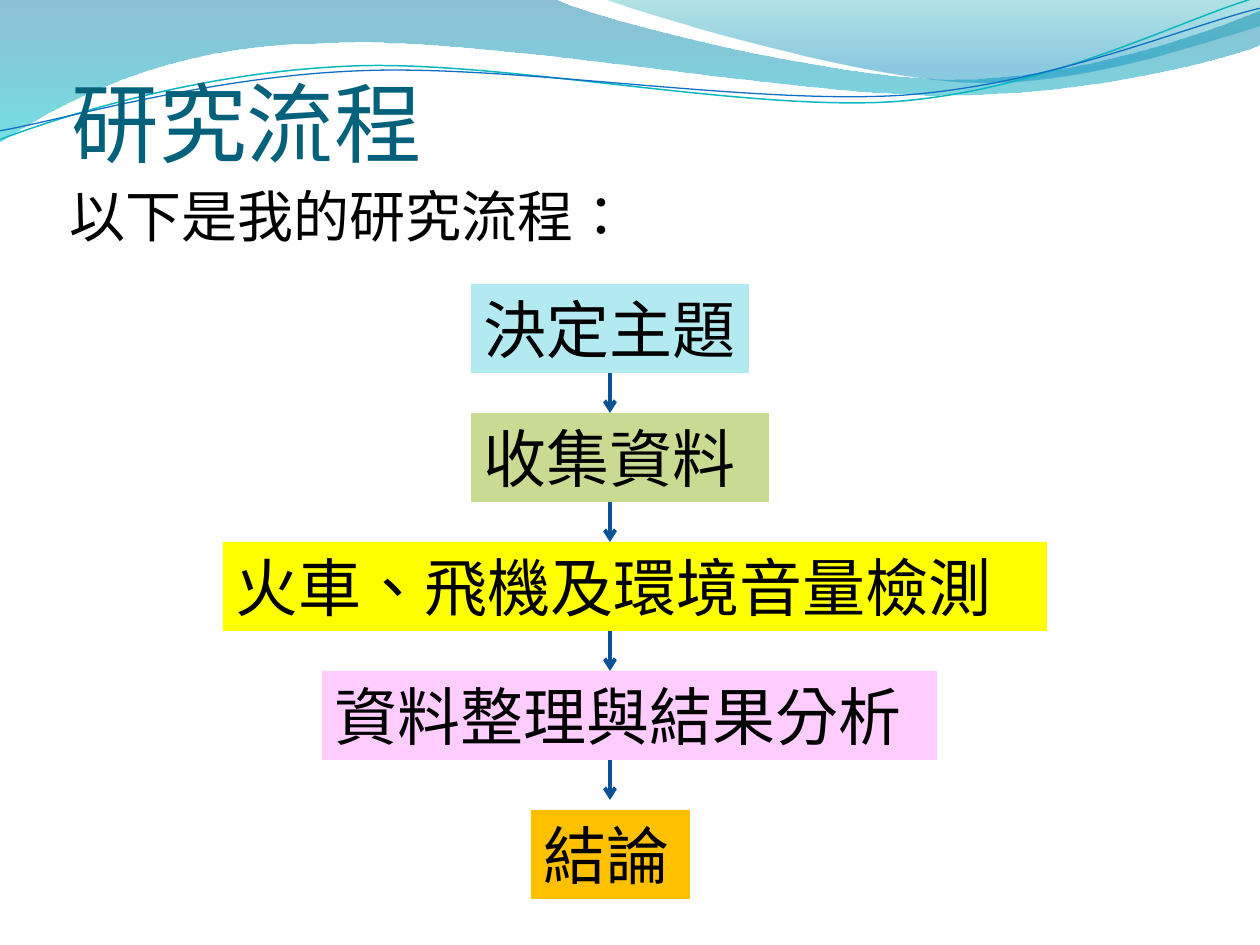
import pptx
import pptx.util
import pptx.dml.color
import pptx.enum.lang
import pptx.enum.shapes
import pptx.enum.text
import pptx.oxml.ns
from lxml import etree

PX = 914400 / 126
FONT = "Noto Sans CJK SC"
SWOOSH_TILT = 357.3
CENTER_X = 610
FIRST_TOP = 284
STEP_HEIGHT = 89
ARROW_LENGTH = 40
LAST_GAP = 10

WAVES = [
    ([(0, -1), (554, -1), (600, 21, 837, 79, 955, 79),
      (1075, 79, 1207, 33, 1260, 11), (1261, 45),
      (1238, 55, 1096, 96, 940, 95), (784, 95, 481, 35, 324, 43),
      (163, 44, 58, 105, -1, 142), (0, -1)],
     [(0, "0074A1", 45), (1, "00C6CF", 55)]),
    ([(604, -1), (641, 14, 859, 78, 969, 82),
      (1079, 87, 1211, 40, 1260, 26), (1260, 0), (604, -1)],
     [(0, "00A1A9", 30), (0.8, "008BBF", 45)]),
]
SWOOSHES = [
    ([(-3, 110), (58, 90, 199, 52, 350, 53), (499, 53, 745, 118, 896, 114),
      (1049, 109, 1184, 45, 1260, 27)], "0AB8BF", 0.85),
    ([(-2, 101), (57, 94, 207, 57, 357, 58), (509, 58, 750, 111, 902, 108),
      (1052, 104, 1188, 52, 1262, 38)], "0F6FC6", 0.75),
]
STEPS = [
    ("決定主題", 471, 278, "B3EAF2"),
    ("收集資料", 471, 298, "C9DA92"),
    ("火車、飛機及環境音量檢測", 223, 824, "FFFF00"),
    ("資料整理與結果分析", 322, 615, "FFCCFF"),
    ("結論", 531, 159, "FFC000"),
]


def px(length):
    return pptx.util.Emu(round(length * PX))


def color(value):
    return pptx.dml.color.RGBColor.from_string(value)


def apply(target, values):
    for attribute, value in values.items():
        setattr(target, attribute, value)


def add_child(parent, tag, **attributes):
    return etree.SubElement(parent, pptx.oxml.ns.qn(tag), attributes)


def bend(outline, segments):
    left, top = outline.left, outline.top
    sides = list(outline._element.spPr.iter(pptx.oxml.ns.qn("a:lnTo")))
    for side, segment in zip(sides, segments[1:]):
        if len(segment) == 2:
            continue
        curve = etree.Element(pptx.oxml.ns.qn("a:cubicBezTo"))
        for x, y in zip(segment[::2], segment[1::2]):
            add_child(curve, "a:pt", x=str(px(x) - left), y=str(px(y) - top))
        side.getparent().replace(side, curve)


def add_outline(slide, segments, close):
    corners = [tuple(map(px, segment[-2:])) for segment in segments]
    builder = slide.shapes.build_freeform(*corners[0])
    builder.add_line_segments(corners[1:], close=close)
    outline = builder.convert_to_shape()
    bend(outline, segments)
    outline.shadow.inherit = False
    return outline


def add_wave(slide, segments, stops):
    wave = add_outline(slide, segments, True)
    wave.line.fill.background()
    wave.fill.gradient()
    wave.fill.gradient_angle = 270
    for stop, (position, tint, _) in zip(wave.fill.gradient_stops, stops):
        stop.position = position
        stop.color.rgb = color(tint)
    tints = wave._element.spPr.iter(pptx.oxml.ns.qn("a:srgbClr"))
    for tint, (_, _, opacity) in zip(tints, stops):
        add_child(tint, "a:alpha", val=str(opacity * 1000))


def add_swoosh(slide, segments, tint, width):
    swoosh = add_outline(slide, segments, False)
    swoosh.rotation = SWOOSH_TILT
    swoosh.fill.background()
    swoosh.line.color.rgb = color(tint)
    swoosh.line.width = pptx.util.Pt(width)


def write(frame, text, size, tint, frame_format, paragraph_format):
    apply(frame, {"word_wrap": True, **frame_format})
    paragraph = frame.paragraphs[0]
    apply(paragraph, {"alignment": pptx.enum.text.PP_ALIGN.LEFT, **paragraph_format})
    run = paragraph.add_run()
    run.text = text
    apply(run.font, {
        "size": pptx.util.Pt(size),
        "name": FONT,
        "language_id": pptx.enum.lang.MSO_LANGUAGE_ID.TRADITIONAL_CHINESE,
    })
    run.font.color.rgb = color(tint)
    add_child(run.font._element, "a:ea", typeface=FONT)


def add_text(slide, text, box, size, tint, frame_format, paragraph_format):
    label = slide.shapes.add_textbox(*map(px, box))
    write(label.text_frame, text, size, tint, frame_format, paragraph_format)


def add_step(slide, text, left, top, width, tint):
    step = slide.shapes.add_shape(pptx.enum.shapes.MSO_SHAPE.RECTANGLE,
                                  *map(px, (left, top, width, STEP_HEIGHT)))
    step.shadow.inherit = False
    step.fill.solid()
    step.fill.fore_color.rgb = color(tint)
    step.line.fill.background()
    write(step.text_frame, text, 36, "000000", {
        "vertical_anchor": pptx.enum.text.MSO_ANCHOR.TOP,
        "auto_size": pptx.enum.text.MSO_AUTO_SIZE.SHAPE_TO_FIT_TEXT,
    }, {})


def add_arrow(slide, top):
    arrow = slide.shapes.add_connector(
        pptx.enum.shapes.MSO_CONNECTOR.STRAIGHT,
        *map(px, (CENTER_X, top, CENTER_X, top + ARROW_LENGTH)))
    arrow.line.color.rgb = color("095295")
    arrow.line.width = pptx.util.Pt(2.25)
    add_child(arrow.line._get_or_add_ln(), "a:tailEnd", type="arrow")
    add_child(arrow._element.spPr, "a:effectLst")


def add_flow(slide):
    pitch = STEP_HEIGHT + ARROW_LENGTH
    last = len(STEPS) - 1
    for index, (text, left, width, tint) in enumerate(STEPS):
        top = FIRST_TOP + index * pitch + (LAST_GAP if index == last else 0)
        add_step(slide, text, left, top, width, tint)
    for index in range(last):
        add_arrow(slide, FIRST_TOP + index * pitch + STEP_HEIGHT)


def main():
    presentation = pptx.Presentation()
    apply(presentation, {"slide_width": px(1260), "slide_height": px(945)})
    slide = presentation.slides.add_slide(presentation.slide_layouts[6])
    for wave in WAVES:
        add_wave(slide, *wave)
    for swoosh in SWOOSHES:
        add_swoosh(slide, *swoosh)
    add_text(slide, "研究流程", (72, 16, 1134, 158), 50, "04617B",
             {"vertical_anchor": pptx.enum.text.MSO_ANCHOR.BOTTOM,
              "margin_left": 0, "margin_right": 0, "margin_bottom": 0}, {})
    add_text(slide, "以下是我的研究流程：", (57, 175, 1134, 624), 32, "000000",
             {}, {"space_before": pptx.util.Pt(6.4)})
    add_flow(slide)
    presentation.save("out.pptx")


if __name__ == "__main__":
    main()
